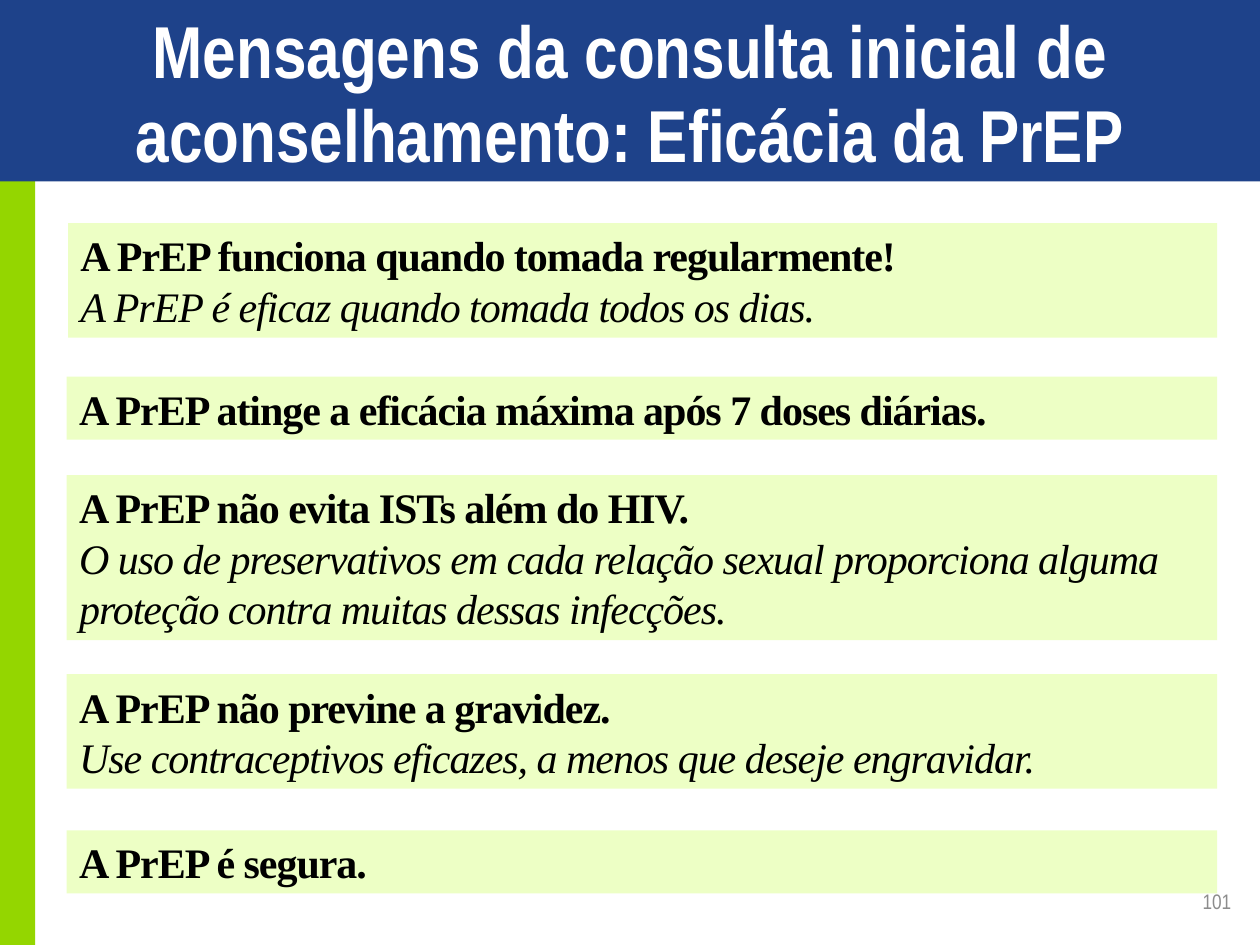
from pptx import Presentation
from pptx import util as u
from pptx.dml import color
from pptx.enum import shapes, text

THEME = {
    "blue": color.RGBColor.from_string("1E428A"),
    "green": color.RGBColor.from_string("94D600"),
    "pale": color.RGBColor.from_string("EDFFC5"),
    "white": color.RGBColor.from_string("FFFFFF"),
    "black": color.RGBColor.from_string("000000"),
    "grey": color.RGBColor.from_string("8C8C8C"),
    "heading": "Arial Narrow",
    "body": "Times New Roman",
    "title_size": u.Pt(42),
    "message_size": u.Pt(24),
    "message_line": u.Pt(28.8),
    "number_size": u.Pt(12),
}

MESSAGES = [
    (0.54, 1.77, 9.12, 0.91, ["A PrEP funciona quando tomada regularmente!",
                              "A PrEP é eficaz quando tomada todos os dias."]),
    (0.53, 2.99, 9.13, 0.5, ["A PrEP atinge a eficácia máxima após 7 doses diárias."]),
    (0.53, 3.77, 9.13, 1.31, ["A PrEP não evita ISTs além do HIV.",
                              "O uso de preservativos em cada relação sexual proporciona "
                              "alguma proteção contra muitas dessas infecções."]),
    (0.53, 5.35, 9.13, 0.91, ["A PrEP não previne a gravidez.",
                              "Use contraceptivos eficazes, a menos que deseje engravidar."]),
    (0.53, 6.59, 9.13, 0.5, ["A PrEP é segura."]),
]


def add_panel(page, left, top, width, height, fill):
    box = page.shapes.add_shape(shapes.MSO_SHAPE.RECTANGLE, u.Inches(left),
                                u.Inches(top), u.Inches(width), u.Inches(height))
    box.shadow.inherit = False
    box.fill.solid()
    box.fill.fore_color.rgb = THEME[fill]
    box.line.fill.background()
    return box


def write(para, words, ink, align, **formats):
    para.alignment = align
    span = para.add_run()
    span.text = words
    span.font.color.rgb = THEME[ink]
    for name, value in formats.items():
        setattr(span.font, name, value)
    return span


deck = Presentation()
deck.slide_width, deck.slide_height = u.Inches(10), u.Inches(7.5)
page = deck.slides.add_slide(deck.slide_layouts[5])

add_panel(page, 0, 1.31, 0.28, 6.19, "green")
add_panel(page, 0, 0, 10, 1.44, "blue")

title = page.shapes.title
title.left, title.top = u.Inches(0), u.Inches(0.27)
title.width, title.height = u.Inches(10), u.Inches(0.94)
title.text_frame.vertical_anchor = text.MSO_ANCHOR.MIDDLE
title.text_frame.auto_size = text.MSO_AUTO_SIZE.NONE
para = title.text_frame.paragraphs[0]
para.line_spacing = u.Pt(48)
write(para, "Mensagens da consulta inicial de aconselhamento: Eficácia da PrEP",
      "white", text.PP_ALIGN.CENTER, name=THEME["heading"],
      size=THEME["title_size"], bold=True)
page.shapes._spTree.append(title._element)

for left, top, width, height, lines in MESSAGES:
    box = add_panel(page, left, top, width, height, "pale")
    frame = box.text_frame
    frame.word_wrap = True
    frame.auto_size = text.MSO_AUTO_SIZE.SHAPE_TO_FIT_TEXT
    frame.vertical_anchor = text.MSO_ANCHOR.MIDDLE
    for index, words in enumerate(lines):
        para = frame.add_paragraph() if index else frame.paragraphs[0]
        para.line_spacing = THEME["message_line"]
        span = write(para, words, "black", text.PP_ALIGN.LEFT, name=THEME["body"],
                     size=THEME["message_size"], bold=index == 0, italic=index > 0)
        span.font._element.set("spc", "-60")

number = page.shapes.add_textbox(u.Inches(7.54), u.Inches(6.95),
                                 u.Inches(2.33), u.Inches(0.4))
number.text_frame.word_wrap = True
number.text_frame.vertical_anchor = text.MSO_ANCHOR.MIDDLE
write(number.text_frame.paragraphs[0], "101", "grey", text.PP_ALIGN.RIGHT,
      name=THEME["heading"], size=THEME["number_size"])

deck.save("out.pptx")
